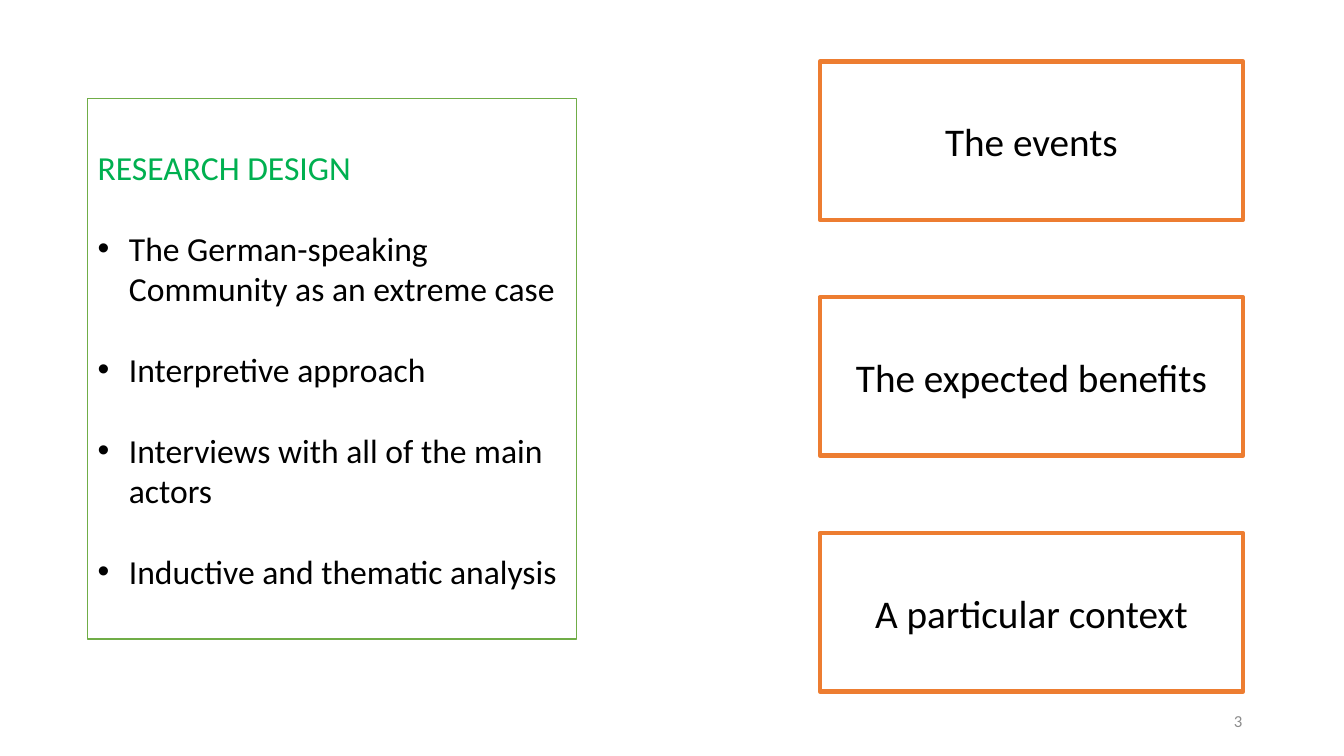
from lxml.etree import SubElement
from pptx import Presentation
from pptx.dml.color import RGBColor
from pptx.enum.shapes import MSO_SHAPE
from pptx.enum.text import MSO_ANCHOR, PP_ALIGN
from pptx.oxml.ns import qn
from pptx.util import Inches, Pt

FONT = "Calibri"
DESIGN_POINTS = [
    "The German-speaking Community as an extreme case",
    "Interpretive approach",
    "Interviews with all of the main actors",
    "Inductive and thematic analysis",
]
THEMES = ["The events", "The expected benefits", "A particular context"]


def color(value):
    return RGBColor.from_string(value)


def format_paragraph(paragraph, size, text_color, alignment):
    paragraph.alignment = alignment
    for run in paragraph.runs:
        run.font.name = FONT
        run.font.size = Pt(size)
        run.font.color.rgb = color(text_color)


def add_bullet(paragraph):
    properties = paragraph._p.get_or_add_pPr()
    properties.set("marL", str(Inches(0.31)))
    properties.set("indent", str(Inches(-0.31)))
    SubElement(properties, qn("a:buFont"), typeface="Arial")
    SubElement(properties, qn("a:buChar"), char="•")


def add_box(slide, left, top, width, height, line_color, line_width):
    shape = slide.shapes.add_shape(
        MSO_SHAPE.RECTANGLE, Inches(left), Inches(top), Inches(width), Inches(height)
    )
    shape.shadow.inherit = False
    shape.fill.solid()
    shape.fill.fore_color.rgb = color("FFFFFF")
    shape.line.color.rgb = color(line_color)
    shape.line.width = Pt(line_width)
    shape.text_frame.word_wrap = True
    shape.text_frame.vertical_anchor = MSO_ANCHOR.MIDDLE
    return shape


def add_research_design(slide, left, top, width, height):
    shape = add_box(slide, left, top, width, height, "70AD47", 1)
    heading = shape.text_frame.paragraphs[0]
    heading.text = "RESEARCH DESIGN"
    format_paragraph(heading, 24, "00B050", PP_ALIGN.LEFT)
    for point in DESIGN_POINTS:
        paragraph = shape.text_frame.add_paragraph()
        paragraph.text = point
        paragraph.space_before = Pt(29)
        format_paragraph(paragraph, 24, "000000", PP_ALIGN.LEFT)
        add_bullet(paragraph)


def add_themes(slide, left, top, width, height):
    box_height = 1.57
    pitch = (height - box_height) / (len(THEMES) - 1)
    for index, theme in enumerate(THEMES):
        shape = add_box(slide, left, top + index * pitch, width, box_height, "ED7D31", 3)
        paragraph = shape.text_frame.paragraphs[0]
        paragraph.text = theme
        format_paragraph(paragraph, 28, "000000", PP_ALIGN.CENTER)


def add_slide_number(slide, left, top, width, height):
    shape = slide.shapes.add_textbox(
        Inches(left), Inches(top), Inches(width), Inches(height)
    )
    shape.text_frame.word_wrap = True
    shape.text_frame.vertical_anchor = MSO_ANCHOR.MIDDLE
    paragraph = shape.text_frame.paragraphs[0]
    paragraph.text = "3"
    format_paragraph(paragraph, 12, "8C8C8C", PP_ALIGN.RIGHT)


def main():
    presentation = Presentation()
    presentation.slide_width = Inches(13.33)
    presentation.slide_height = Inches(7.5)
    slide = presentation.slides.add_slide(presentation.slide_layouts[6])
    add_themes(slide, 8.13, 0.61, 4.2, 6.25)
    add_research_design(slide, 0.87, 0.98, 4.85, 5.36)
    add_slide_number(slide, 9.42, 6.95, 3, 0.4)
    presentation.save("out.pptx")


if __name__ == "__main__":
    main()
